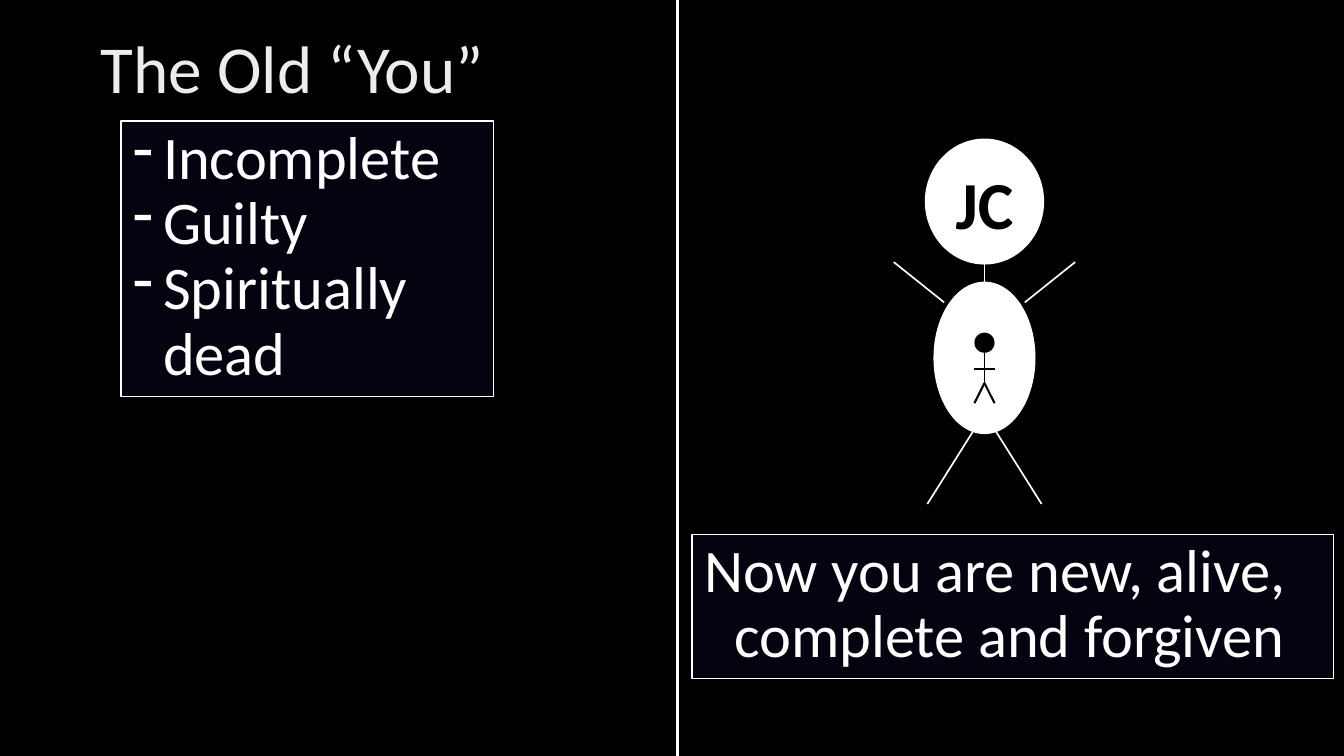
"""Build a slide that sets the old "you" beside the new one."""
from lxml import etree
from pptx import Presentation
from pptx import util as u
from pptx.dml.color import RGBColor
from pptx.enum import shapes, text
from pptx.oxml.ns import qn

COLORS = {"black": "000000", "white": "FFFFFF", "panel": "040410", "title": "ECECEC"}
COLUMNS, ROWS = 400, 225
CELL = u.Inches(1) // 36
FONT = "Calibri"
AXIS = 293
INDENT = 9


def cells(*counts):
    return [u.Emu(round(count * CELL)) for count in counts]


def rgb(name):
    return RGBColor.from_string(COLORS[name])


def write(frame, lines, size, color, bold=False, align=text.PP_ALIGN.LEFT):
    frame.word_wrap = True
    frame.auto_size = text.MSO_AUTO_SIZE.SHAPE_TO_FIT_TEXT
    frame.vertical_anchor = text.MSO_ANCHOR.TOP
    frame.text = "\n".join(lines)
    for paragraph in frame.paragraphs:
        paragraph.alignment = align
        font = paragraph.runs[0].font
        font.name, font.size, font.bold = FONT, u.Pt(size), bold
        font.color.rgb = rgb(color)


def add_label(parent, box, label, color, bold=False):
    label_box = parent.add_textbox(*cells(*box))
    write(label_box.text_frame, [label], 40, color, bold, text.PP_ALIGN.CENTER)


def add_filled(parent, preset, box, fill, outline=None, width=0.75):
    filled = parent.add_shape(preset, *cells(*box))
    filled.shadow.inherit = False
    filled.fill.solid()
    filled.fill.fore_color.rgb = rgb(fill)
    if outline:
        filled.line.color.rgb = rgb(outline)
        filled.line.width = u.Pt(width)
    else:
        filled.line.fill.background()
    return filled


def add_panel(parent, box, lines, bullet=None):
    panel = add_filled(parent, shapes.MSO_SHAPE.RECTANGLE, box, "panel", "white")
    write(panel.text_frame, lines, 36, "white")
    for paragraph in panel.text_frame.paragraphs:
        paragraph.line_spacing = 0.9
        properties = paragraph._p.get_or_add_pPr()
        properties.set("marL", str(INDENT * CELL))
        properties.set("indent", str(-INDENT * CELL))
        if bullet:
            etree.SubElement(properties, qn("a:buChar")).set("char", bullet)


def add_oval(parent, top, width, height, fill, outline=None, line_width=0.75):
    box = (AXIS - width / 2, top, width, height)
    add_filled(parent, shapes.MSO_SHAPE.OVAL, box, fill, outline, line_width)


def add_line(parent, start, end, color, width=1):
    line = parent.add_connector(shapes.MSO_CONNECTOR.STRAIGHT, *cells(*start, *end))
    line.line.color.rgb = rgb(color)
    line.line.width = u.Pt(width)
    etree.SubElement(line._element.spPr, qn("a:effectLst"))


def add_limbs(parent, start, end, color, width=1):
    for side in (-1, 1):
        add_line(parent, (AXIS + side * start[0], start[1]),
                 (AXIS + side * end[0], end[1]), color, width)


def add_large_figure(slide):
    figure = slide.shapes.add_group_shape().shapes
    add_oval(figure, 42, 34, 36, "white", "white", 3)
    add_line(figure, (AXIS, 78), (AXIS, 123), "white")
    add_limbs(figure, (0, 123), (17, 150), "white")
    add_limbs(figure, (27, 78), (12, 90), "white")
    add_oval(figure, 84, 30, 45, "white", "white")
    add_label(figure, (AXIS - 19.5, 46.4, 39, 27.7), "JC", "black", bold=True)


def add_inner_figure(slide):
    figure = slide.shapes.add_group_shape().shapes
    add_oval(figure, 99, 6, 6, "black")
    add_line(figure, (AXIS, 105), (AXIS, 114), "black")
    add_limbs(figure, (0, 114), (3, 120), "black", 1.25)
    add_line(figure, (AXIS - 3, 109.8), (AXIS + 3, 109.8), "black")


def main():
    deck = Presentation()
    deck.slide_width, deck.slide_height = cells(COLUMNS, ROWS)
    slide = deck.slides.add_slide(deck.slide_layouts[6])
    slide.background.fill.solid()
    slide.background.fill.fore_color.rgb = rgb("black")

    add_label(slide.shapes, (12, 6, 150, 27.7), "The Old “You”", "title")
    add_panel(slide.shapes, (36, 36, 111, 82),
              ["Incomplete", "Guilty", "Spiritually dead"], bullet="-")
    add_line(slide.shapes, (201.6, 0), (201.6, ROWS), "white", 2)
    add_large_figure(slide)
    add_panel(slide.shapes, (206, 159, 191, 43),
              ["Now you are new, alive, complete and forgiven"])
    add_inner_figure(slide)
    deck.save("out.pptx")


if __name__ == "__main__":
    main()
